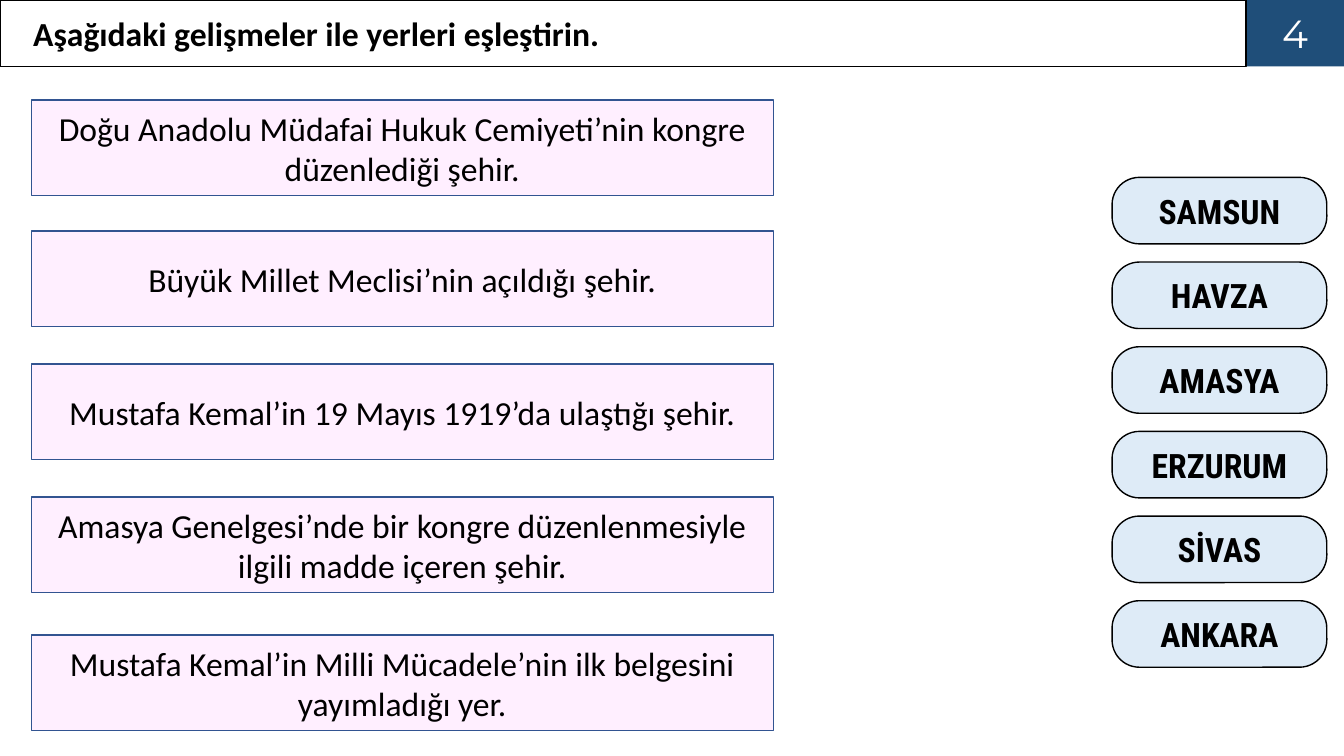
from pptx import Presentation
from pptx.dml.color import RGBColor
from pptx.enum.shapes import MSO_SHAPE
from pptx.enum.text import MSO_ANCHOR, PP_ALIGN
from pptx.util import Inches, Pt


def color(code):
    return RGBColor.from_string(code)


class Board:
    black = "000000"
    body = "Calibri"

    def __init__(self, slide):
        self.slide = slide

    def shape(self, kind, left, top, width, height, fill=None, line=None):
        item = self.slide.shapes.add_shape(
            kind, Inches(left), Inches(top), Inches(width), Inches(height))
        item.shadow.inherit = False
        if fill:
            item.fill.solid()
            item.fill.fore_color.rgb = color(fill)
        else:
            item.fill.background()
        if line:
            item.line.color.rgb = color(line)
            item.line.width = Pt(1)
        else:
            item.line.fill.background()
        return item

    def text(self, item, words, font, size=24, ink=black, bold=False,
             align=PP_ALIGN.CENTER):
        frame = item.text_frame
        frame.word_wrap = True
        frame.vertical_anchor = MSO_ANCHOR.MIDDLE
        para = frame.paragraphs[0]
        para.alignment = align
        run = para.add_run()
        run.text = words
        run.font.name = font
        run.font.size = Pt(size)
        run.font.bold = bold
        run.font.color.rgb = color(ink)

    def number(self, words):
        item = self.shape(MSO_SHAPE.RECTANGLE, 12.36, 0, 0.97, 0.66, "1F4E79")
        self.text(item, words, "Montserrat", 28, "FFFFFF")

    def title(self, words):
        item = self.shape(MSO_SHAPE.RECTANGLE, 0, 0, 12.36, 0.66,
                          line=self.black)
        item.text_frame.margin_left = Inches(0.33)
        self.text(item, words, self.body, bold=True, align=PP_ALIGN.LEFT)

    def event(self, top, words):
        item = self.shape(MSO_SHAPE.RECTANGLE, 0.31, top, 7.36, 0.95,
                          "FFEFFF", "325491")
        self.text(item, words, self.body)

    def city(self, top, words):
        item = self.shape(MSO_SHAPE.ROUNDED_RECTANGLE, 11.03, top, 2.13, 0.66,
                          "DEEBF7", self.black)
        item.adjustments[0] = 0.41
        self.text(item, words, "Roboto Condensed", bold=True)


EVENTS = [
    (0.99, "Doğu Anadolu Müdafai Hukuk Cemiyeti’nin kongre düzenlediği şehir."),
    (2.29, "Büyük Millet Meclisi’nin açıldığı şehir."),
    (3.61, "Mustafa Kemal’in 19 Mayıs 1919’da ulaştığı şehir."),
    (4.93, "Amasya Genelgesi’nde bir kongre düzenlenmesiyle ilgili madde "
           "içeren şehir."),
    (6.3, "Mustafa Kemal’in Milli Mücadele’nin ilk belgesini yayımladığı yer."),
]
CITIES = ["SAMSUN", "HAVZA", "AMASYA", "ERZURUM", "SİVAS", "ANKARA"]


def main():
    deck = Presentation()
    deck.slide_width = Inches(13.33)
    deck.slide_height = Inches(7.5)
    board = Board(deck.slides.add_slide(deck.slide_layouts[6]))
    board.number("4")
    for top, words in EVENTS:
        board.event(top, words)
    board.title("Aşağıdaki gelişmeler ile yerleri eşleştirin.")
    for row, name in enumerate(CITIES):
        board.city(1.76 + 0.84 * row, name)
    deck.save("out.pptx")


if __name__ == "__main__":
    main()
